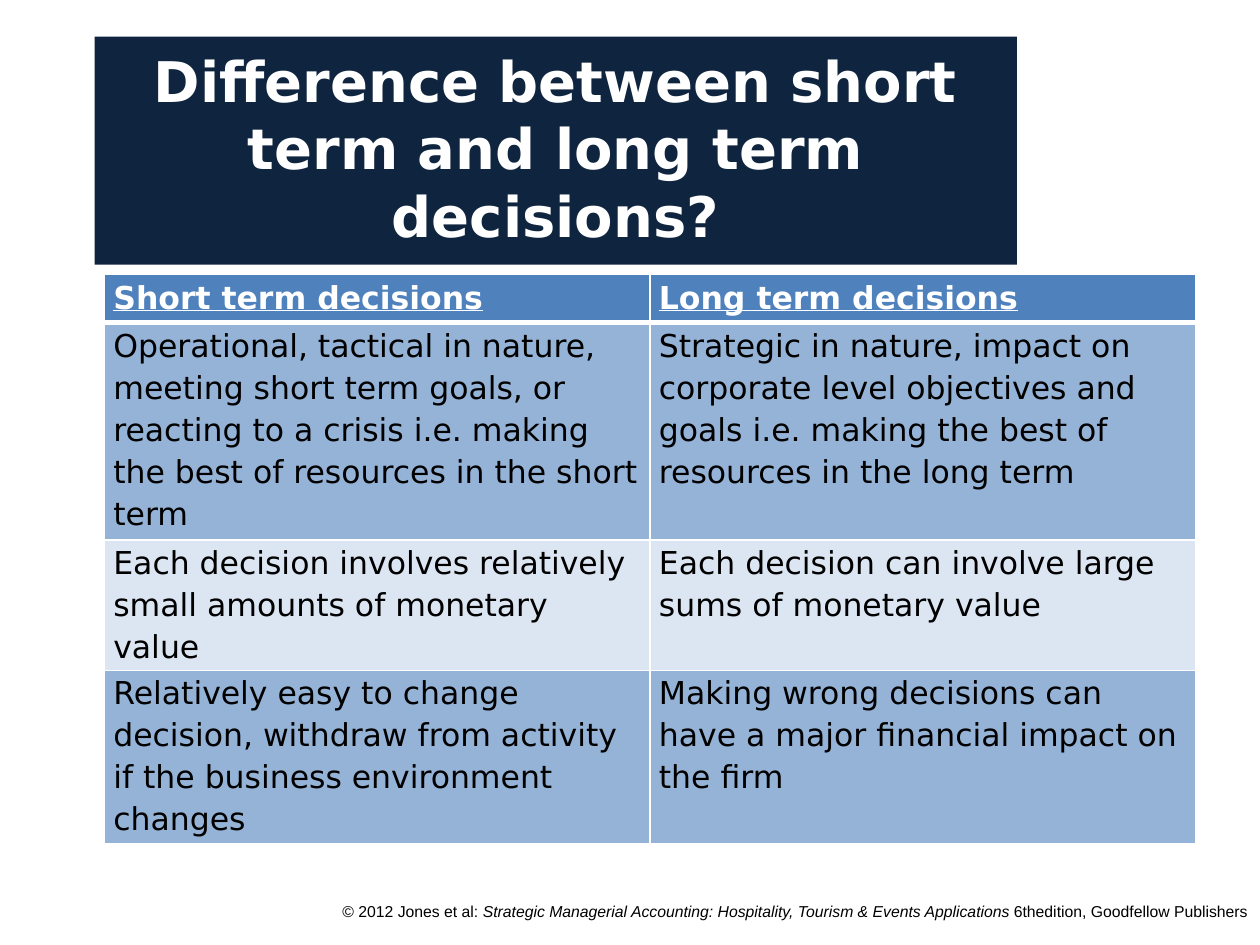
from lxml import etree
from pptx import Presentation
from pptx.dml.color import RGBColor
from pptx.enum.shapes import MSO_SHAPE
from pptx.enum.text import MSO_ANCHOR, PP_ALIGN
from pptx.oxml.ns import qn
from pptx.util import Inches, Pt

RECTANGLE = MSO_SHAPE.RECTANGLE
TOP = MSO_ANCHOR.TOP
CENTER, RIGHT = PP_ALIGN.CENTER, PP_ALIGN.RIGHT

WHITE = RGBColor(0xFF, 0xFF, 0xFF)
BLACK = RGBColor(0x00, 0x00, 0x00)
NAVY = RGBColor(0x0F, 0x24, 0x3E)
HEADER_BLUE = RGBColor(0x4F, 0x81, 0xBD)
MID_BLUE = RGBColor(0x95, 0xB3, 0xD7)
PALE_BLUE = RGBColor(0xDC, 0xE6, 0xF2)

TITLE = "Difference between short term and long term decisions?"
FOOTER_RUNS = [
    ("© 2012 Jones et al: ", False),
    ("Strategic Managerial Accounting: Hospitality, Tourism & Events Applications ", True),
    ("6thedition, Goodfellow Publishers", False),
]
ROWS = [
    ("Short term decisions", "Long term decisions"),
    ("Operational, tactical in nature, meeting short term goals, or reacting to a "
     "crisis i.e. making the best of resources in the short term",
     "Strategic in nature, impact on corporate level objectives and goals i.e. "
     "making the best of resources in the long term"),
    ("Each decision involves relatively small amounts of monetary value",
     "Each decision can involve large sums of monetary value"),
    ("Relatively easy to change decision, withdraw from activity if the business "
     "environment changes",
     "Making wrong decisions can have a major financial impact on the firm"),
]
ROW_HEIGHTS = [0.38, 1.62, 0.96, 1.29]
COLUMN_WIDTH = 4.33


def style_font(font, name, size, color, bold=False):
    font.name = name
    font.size = Pt(size)
    font.color.rgb = color
    font.bold = bold


def add_borders(cell, bottom_width):
    """Draw white borders; call before setting the fill, which must follow them."""
    properties = cell._tc.get_or_add_tcPr()
    for side, width in (("L", 1), ("R", 1), ("T", 1), ("B", bottom_width)):
        line = etree.SubElement(properties, qn(f"a:ln{side}"), w=str(Pt(width)))
        fill = etree.SubElement(line, qn("a:solidFill"))
        etree.SubElement(fill, qn("a:srgbClr"), val=str(WHITE))


def add_footer(slide):
    box = slide.shapes.add_textbox(Inches(2.23), Inches(7.11), Inches(7.77), Inches(0.39))
    box.text_frame.word_wrap = True
    paragraph = box.text_frame.paragraphs[0]
    paragraph.alignment = RIGHT
    for text, italic in FOOTER_RUNS:
        run = paragraph.add_run()
        run.text = text
        style_font(run.font, "Arial", 9, BLACK)
        run.font.italic = italic


def add_title(slide):
    shape = slide.shapes.add_shape(
        RECTANGLE, Inches(0.75), Inches(0.29), Inches(7.32), Inches(1.81))
    shape.shadow.inherit = False
    shape.fill.solid()
    shape.fill.fore_color.rgb = NAVY
    shape.line.fill.background()
    frame = shape.text_frame
    frame.word_wrap = True
    frame.vertical_anchor = TOP
    frame.margin_top = Inches(0.08)
    frame.text = TITLE
    paragraph = frame.paragraphs[0]
    paragraph.alignment = CENTER
    style_font(paragraph.runs[0].font, "DejaVu Sans", 32, WHITE, bold=True)


def add_decision_table(slide):
    columns = len(ROWS[0])
    table = slide.shapes.add_table(
        len(ROWS), columns, Inches(0.83), Inches(2.18),
        Inches(COLUMN_WIDTH * columns), Inches(sum(ROW_HEIGHTS))).table
    for column in table.columns:
        column.width = Inches(COLUMN_WIDTH)
    for row_index, (texts, height) in enumerate(zip(ROWS, ROW_HEIGHTS)):
        table.rows[row_index].height = Inches(height)
        is_header = row_index == 0
        band = MID_BLUE if row_index % 2 else PALE_BLUE
        for column_index, text in enumerate(texts):
            cell = table.cell(row_index, column_index)
            cell.margin_left = cell.margin_right = Inches(0.07)
            cell.margin_top = cell.margin_bottom = 0
            add_borders(cell, 3 if is_header else 1)
            cell.fill.solid()
            cell.fill.fore_color.rgb = HEADER_BLUE if is_header else band
            cell.text = text
            paragraph = cell.text_frame.paragraphs[0]
            paragraph.line_spacing = 1.15
            font = paragraph.runs[0].font
            style_font(font, "DejaVu Sans", 18, WHITE if is_header else BLACK, is_header)
            font.underline = is_header


def main():
    presentation = Presentation()
    presentation.slide_width = Inches(10)
    presentation.slide_height = Inches(7.5)
    slide = presentation.slides.add_slide(presentation.slide_layouts[6])
    add_footer(slide)
    add_title(slide)
    add_decision_table(slide)
    presentation.save("out.pptx")


if __name__ == "__main__":
    main()
